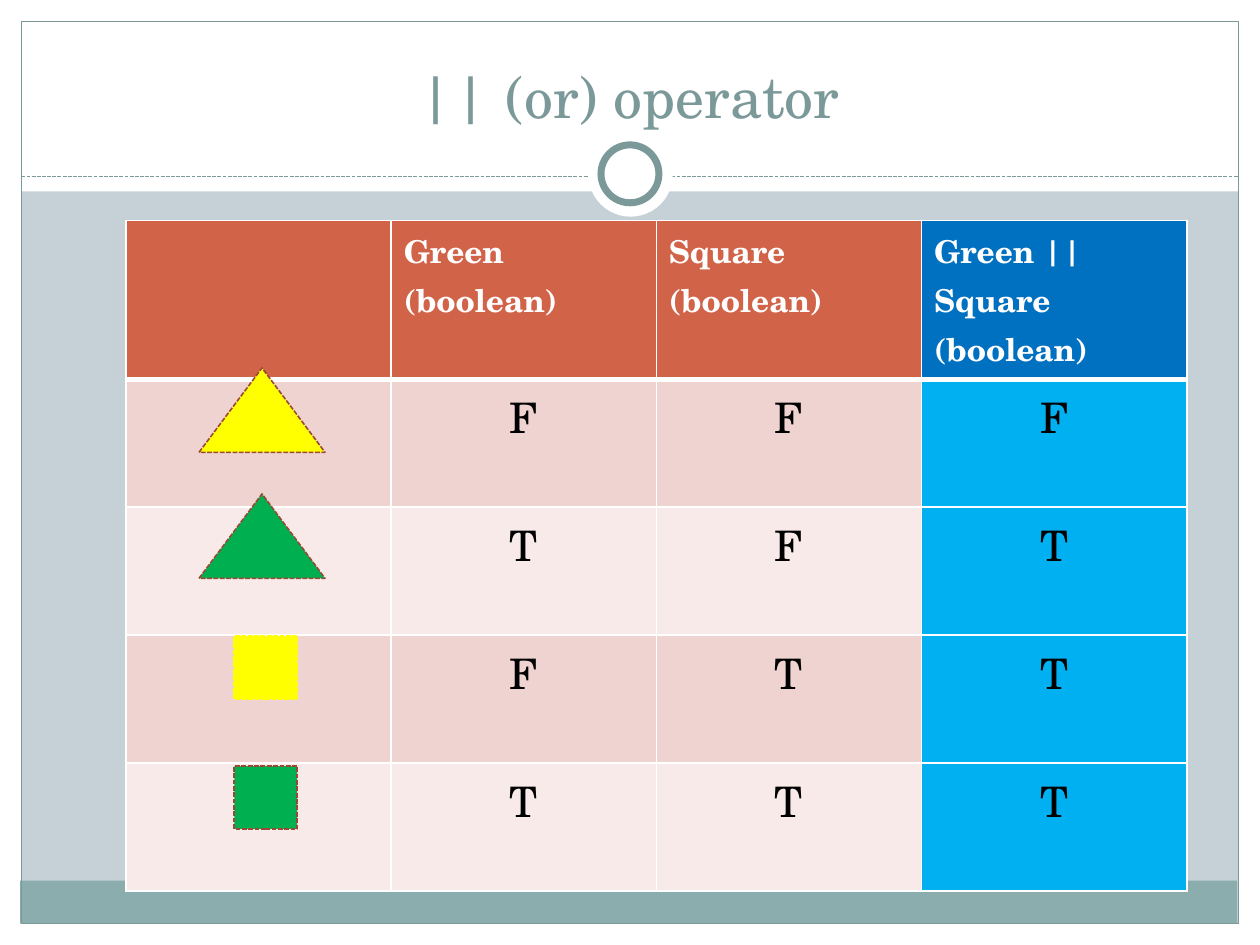
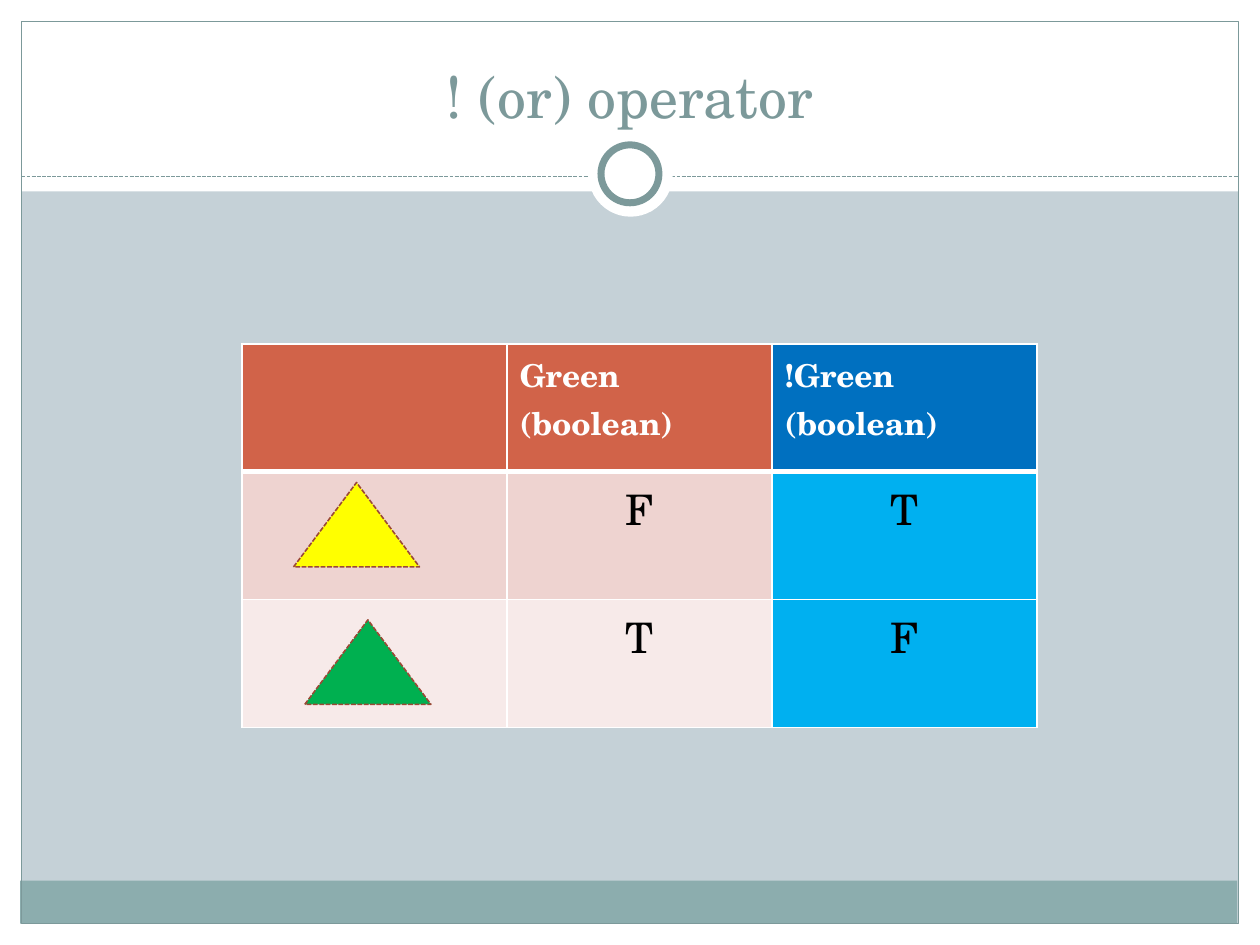
from lxml import etree
from pptx import Presentation
from pptx.dml.color import RGBColor
from pptx.enum.dml import MSO_LINE
from pptx.enum.shapes import MSO_CONNECTOR, MSO_SHAPE
from pptx.enum.text import MSO_ANCHOR, PP_ALIGN
from pptx.oxml import parse_xml
from pptx.oxml.ns import nsdecls, qn
from pptx.util import Inches, Pt

RECT, OVAL, TRIANGLE = MSO_SHAPE.RECTANGLE, MSO_SHAPE.OVAL, MSO_SHAPE.ISOSCELES_TRIANGLE
STRAIGHT, DASH = MSO_CONNECTOR.STRAIGHT, MSO_LINE.SQUARE_DOT
LEFT, CENTER, BOTTOM = PP_ALIGN.LEFT, PP_ALIGN.CENTER, MSO_ANCHOR.BOTTOM

FONT = "TeX Gyre Schola"
WHITE, TEAL, BAND, BACK = "FFFFFF", "7C999A", "8CADAE", "C5D1D7"
YELLOW, GREEN, BROWN = "FFFF00", "00B050", "9B4936"
HEAD, HEAD_RESULT, RESULT = "D16349", "0070C0", "00B0F0"
STRIPES = ["EED3D0", "F7EAE9"]

TITLE_FMT = {"name": FONT, "size": Pt(33), "bold": False}
HEAD_FMT = {"name": FONT, "size": Pt(18), "bold": True}
BODY_FMT = {"name": FONT, "size": Pt(24), "bold": False}

FRAME = [
    (RECT, (0, 7.33, 10, 0.17), WHITE, None, 0),
    (RECT, (0, 0, 10, 1.52), WHITE, None, 0),
    (RECT, (0, 0, 0.17, 7.5), WHITE, None, 0),
    (RECT, (9.83, 0, 0.17, 7.5), WHITE, None, 0),
    (RECT, (0.16, 6.99, 9.66, 0.34), BAND, None, 0),
    (RECT, (0.17, 0.17, 9.66, 7.16), None, TEAL, 0.75),
]
RING = [
    (OVAL, (4.67, 1.05, 0.67, 0.67), WHITE, None, 0),
    (OVAL, (4.77, 1.15, 0.46, 0.46), WHITE, TEAL, 4),
]

SLIDES = [
    {
        "title": "|| (or) operator",
        "at": (1, 1.75, 8.42, 5.08),
        "head_height": 1.26,
        "rows": [
            ["", "Green\n(boolean)", "Square\n(boolean)", "Green || Square\n(boolean)"],
            ["", "F", "F", "F"],
            ["", "T", "F", "T"],
            ["", "F", "T", "T"],
            ["", "T", "T", "T"],
        ],
        "marks": [
            (TRIANGLE, (1.58, 2.92, 1, 0.67), YELLOW, BROWN),
            (TRIANGLE, (1.58, 3.92, 1, 0.67), GREEN, BROWN),
            (RECT, (1.86, 5.05, 0.5, 0.5), YELLOW, YELLOW),
            (RECT, (1.86, 6.08, 0.5, 0.5), GREEN, BROWN),
        ],
    },
    {
        "title": "! (or) operator",
        "at": (1.92, 2.73, 6.31, 3.05),
        "head_height": 1.01,
        "rows": [
            ["", "Green\n(boolean)", "!Green\n(boolean)"],
            ["", "F", "T"],
            ["", "T", "F"],
        ],
        "marks": [
            (TRIANGLE, (2.33, 3.83, 1, 0.67), YELLOW, BROWN),
            (TRIANGLE, (2.42, 4.92, 1, 0.67), GREEN, BROWN),
        ],
    },
]


def paint(target, color):
    if color is None:
        target.background()
    else:
        target.solid()
        target.fore_color.rgb = RGBColor.from_string(color)


def write(tf, text, fmt, color, align):
    for i, line in enumerate(text.split("\n")):
        p = tf.paragraphs[0] if i == 0 else tf.add_paragraph()
        p.alignment = align
        r = p.add_run()
        r.text = line
        for name, value in fmt.items():
            setattr(r.font, name, value)
        paint(r.font.fill, color)


prs = Presentation()
prs.slide_width, prs.slide_height = Inches(10), Inches(7.5)

for data in SLIDES:
    s = prs.slides.add_slide(prs.slide_layouts[6])
    paint(s.background.fill, BACK)

    marks = [(*mark, 0.9, DASH) for mark in data["marks"]]
    layers = [(*item, None) for item in FRAME] + ["rule"]
    layers += [(*item, None) for item in RING] + ["content"] + marks
    for layer in layers:
        if layer == "rule":
            cn = s.shapes.add_connector(STRAIGHT, Inches(0.17), Inches(1.4), Inches(9.83), Inches(1.4))
            paint(cn.line.fill, TEAL)
            cn.line.width = Pt(0.75)
            cn.line.dash_style = DASH
            etree.SubElement(cn._element.spPr, qn("a:effectLst"))
        elif layer == "content":
            tb = s.shapes.add_textbox(Inches(0.33), Inches(0.25), Inches(9.33), Inches(0.83))
            tf = tb.text_frame
            tf.word_wrap = True
            tf.vertical_anchor = BOTTOM
            write(tf, data["title"], TITLE_FMT, TEAL, CENTER)

            rows = data["rows"]
            n_rows, n_cols = len(rows), len(rows[0])
            x, y, w, h = [Inches(v) for v in data["at"]]
            table = s.shapes.add_table(n_rows, n_cols, x, y, w, h).table
            table.rows[0].height = Inches(data["head_height"])
            for i, row in enumerate(rows):
                for j, text in enumerate(row):
                    cell = table.cell(i, j)
                    widths = {"L": 1, "R": 1, "T": 3 if i == 1 else 1, "B": 3 if i == 0 else 1}
                    tcPr = cell._tc.get_or_add_tcPr()
                    for side, width in widths.items():
                        tcPr.append(parse_xml(
                            f'<a:ln{side} {nsdecls("a")} w="{Pt(width)}"><a:solidFill>'
                            f'<a:srgbClr val="{WHITE}"/></a:solidFill></a:ln{side}>'))
                    last = j == n_cols - 1
                    if i == 0:
                        paint(cell.fill, HEAD_RESULT if last else HEAD)
                    else:
                        paint(cell.fill, RESULT if last else STRIPES[(i - 1) % 2])
                    if text and i == 0:
                        write(cell.text_frame, text, HEAD_FMT, WHITE, LEFT)
                    elif text:
                        write(cell.text_frame, text, BODY_FMT, "000000", CENTER)
        else:
            kind, at, fill, line, width, dash = layer
            sp = s.shapes.add_shape(kind, *[Inches(v) for v in at])
            sp.shadow.inherit = False
            paint(sp.fill, fill)
            paint(sp.line.fill, line)
            if line:
                sp.line.width = Pt(width)
                sp.line.dash_style = dash

prs.save("out.pptx")
